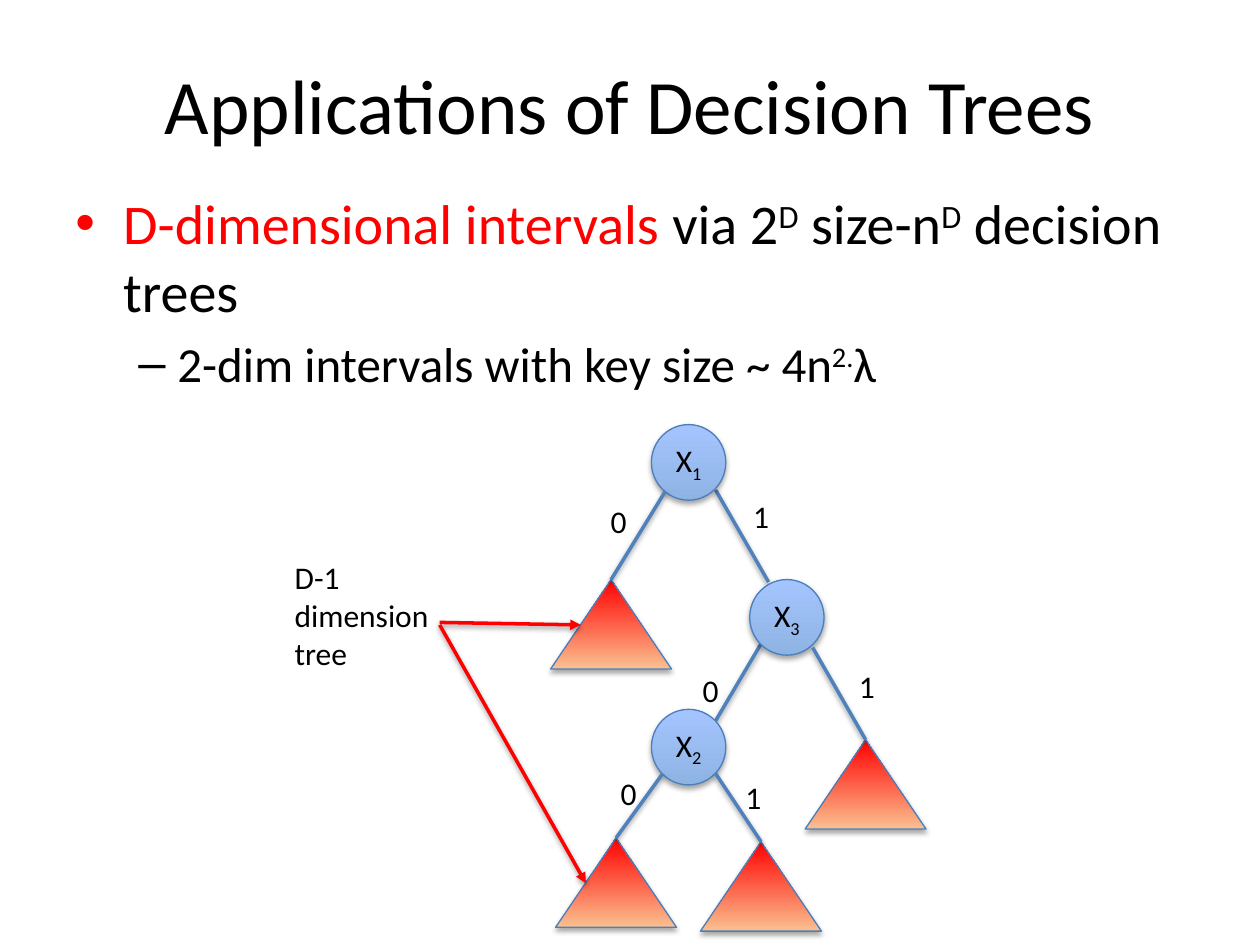
import lxml.etree
import pptx
import pptx.dml.color
import pptx.enum.shapes
import pptx.enum.text
import pptx.oxml.ns
import pptx.util

Inches, Pt = pptx.util.Inches, pptx.util.Pt
SHAPE = pptx.enum.shapes.MSO_SHAPE
ANCHOR = pptx.enum.text.MSO_ANCHOR
ALIGN = pptx.enum.text.PP_ALIGN
qn = pptx.oxml.ns.qn

COLORS = {"text": "000000", "accent": "FF0000", "edge": "4F81BD", "outline": "4B7EBC",
          "node_low": "8EB4E3", "node_high": "A4C4FF", "leaf_low": "FAC090"}


def rgb(name):
    """Return the named colour."""
    return pptx.dml.color.RGBColor.from_string(COLORS[name])


def sub(parent, tag, **attributes):
    """Append an XML element and return it."""
    return lxml.etree.SubElement(parent, qn(tag), {k: str(v) for k, v in attributes.items()})


class TreeSlide:
    """Hold the style and the slide on which the elements are drawn."""

    node_size = (0.59, 0.6)
    leaf_size = (0.96, 0.71)
    centred = {"vertical_anchor": ANCHOR.MIDDLE, "margin_left": 0, "margin_right": 0,
               "margin_top": 0, "margin_bottom": 0, "word_wrap": False}

    def __init__(self, slide):
        """Keep the current slide."""
        self.slide = slide

    def apply(self, target, values):
        """Set each format value on the target."""
        for name, value in values.items():
            setattr(target, name, value)

    def add_wording(self, paragraph, runs, size, align=ALIGN.LEFT):
        """Add runs of wording, baseline shift and colour."""
        paragraph.alignment = align
        for wording, baseline, color in runs:
            run = paragraph.add_run()
            run.text = wording
            self.apply(run.font, {"name": "Calibri", "size": Pt(size)})
            run.font.color.rgb = rgb(color)
            if baseline:
                run._r.get_or_add_rPr().set("baseline", str(baseline * 1000))

    def box(self, left, top, width, height):
        """Add a wrapping text box and return its frame."""
        frame = self.slide.shapes.add_textbox(*map(Inches, (left, top, width, height))).text_frame
        frame.word_wrap = True
        return frame

    def title(self, wording):
        """Place and format the title."""
        title = self.slide.shapes.title
        self.apply(title, {"left": Inches(0.5), "top": Inches(0.3),
                           "width": Inches(9), "height": Inches(1.05)})
        title.text_frame.vertical_anchor = ANCHOR.MIDDLE
        self.add_wording(title.text_frame.paragraphs[0], [(wording, 0, "text")], 44, ALIGN.CENTER)

    def bullets(self, items):
        """Add the bulleted outline."""
        frame = self.box(0.5, 1.45, 9, 5.25)
        for index, (runs, size, margin, hanging, mark) in enumerate(items):
            paragraph = frame.add_paragraph() if index else frame.paragraphs[0]
            self.add_wording(paragraph, runs, size)
            paragraph.space_before = Pt(size * 0.2)
            properties = paragraph._p.get_or_add_pPr()
            properties.set("marL", str(Inches(margin)))
            properties.set("indent", str(-Inches(hanging)))
            sub(properties, "a:buFont", typeface="Arial")
            sub(properties, "a:buChar", char=mark)

    def note(self, wording, *place):
        """Add a plain remark."""
        self.add_wording(self.box(*place).paragraphs[0], [(wording, 0, "text")], 18)

    def label(self, wording, left, top):
        """Add the value of a branch."""
        frame = self.box(left, top, 0.3, 0.29)
        self.apply(frame, self.centred)
        self.add_wording(frame.paragraphs[0], [(wording, 0, "text")], 18, ALIGN.CENTER)

    def cast_shadow(self, effects, alpha, distance):
        """Put a soft shadow below an element."""
        shadow = sub(effects, "a:outerShdw", blurRad=Pt(3.1), dist=Pt(distance),
                     dir=90 * 60000, rotWithShape=0)
        sub(sub(shadow, "a:srgbClr", val=COLORS["text"]), "a:alpha", val=alpha * 1000)

    def solid(self, kind, place, size, low, high):
        """Add an outlined shape whose colour runs from bottom to top."""
        shape = self.slide.shapes.add_shape(kind, *map(Inches, place + size))
        shape.fill.gradient()
        shape.fill.gradient_angle = 90
        for stop, color in zip(shape.fill.gradient_stops, (low, high)):
            stop.color.rgb = rgb(color)
        shape.line.color.rgb = rgb("outline")
        shape.line.width = Pt(0.75)
        shape.shadow.inherit = False
        self.cast_shadow(shape._element.spPr.find(qn("a:effectLst")), 35, 1.8)
        return shape

    def node(self, number, place):
        """Add a decision node."""
        frame = self.solid(SHAPE.OVAL, place, self.node_size, "node_low", "node_high").text_frame
        self.apply(frame, self.centred)
        self.add_wording(frame.paragraphs[0], [("X", 0, "text"), (number, -25, "text")],
                         18, ALIGN.CENTER)

    def leaf(self, place):
        """Add a subtree."""
        return self.solid(SHAPE.ISOSCELES_TRIANGLE, place, self.leaf_size, "leaf_low", "accent")

    def line(self, start, end, color="edge", arrow=False, leaf=None):
        """Add a line, joined to the top of a leaf where one is given."""
        line = self.slide.shapes.add_connector(
            pptx.enum.shapes.MSO_CONNECTOR.STRAIGHT, *map(Inches, start + end))
        if leaf is not None:
            line.end_connect(leaf, 0)
        line.line.color.rgb = rgb(color)
        line.line.width = Pt(2)
        properties = line._element.spPr
        if arrow:
            sub(properties.find(qn("a:ln")), "a:tailEnd", type="triangle")
        self.cast_shadow(sub(properties, "a:effectLst"), 38, 1.6)


def main():
    """Build the slide and save it."""
    deck = pptx.Presentation()
    deck.slide_width, deck.slide_height = Inches(10), Inches(7.5)
    tree = TreeSlide(deck.slides.add_slide(deck.slide_layouts[5]))
    tree.title("Applications of Decision Trees")
    tree.bullets([
        ([("D-dimensional intervals ", 0, "accent"), ("via 2", 0, "text"), ("D", 30, "text"),
          (" size-n", 0, "text"), ("D", 30, "text"), (" decision trees", 0, "text")],
         32, 0.38, 0.38, "•"),
        ([("2-dim intervals with key size ~ 4n", 0, "text"), ("2.", 30, "text"),
          ("λ", 0, "text")], 28, 0.81, 0.31, "–"),
    ])
    tree.note("D-1 dimension tree", 2.24, 4.38, 1.59, 1.01)

    inner_branches = [((6.04, 5.11), (5.68, 5.72)), ((5.68, 3.89), (6.1, 4.62))]
    for start, end in inner_branches:
        tree.line(start, end)
    for number, place in {"1": (5.17, 3.37), "2": (5.17, 5.63), "3": (5.95, 4.6)}.items():
        tree.node(number, place)

    leaf_branches = [((5.28, 3.9), (4.37, 4.6)), ((5.68, 6.14), (5.56, 6.68)),
                     ((5.26, 6.14), (4.41, 6.65)), ((6.45, 5.14), (6.39, 5.87))]
    for start, place in leaf_branches:
        tree.line(start, place, leaf=tree.leaf(place))

    branch_values = {"0": [(4.76, 3.99), (4.84, 6.15), (5.49, 5.33)],
                     "1": [(5.89, 3.95), (5.83, 6.18), (6.73, 5.3)]}
    for value, places in branch_values.items():
        for place in places:
            tree.label(value, *place)

    for start, end in [((3.49, 4.94), (4.61, 4.96)), ((3.49, 4.96), (4.65, 7.01))]:
        tree.line(start, end, "accent", arrow=True)
    deck.save("out.pptx")


if __name__ == "__main__":
    main()
